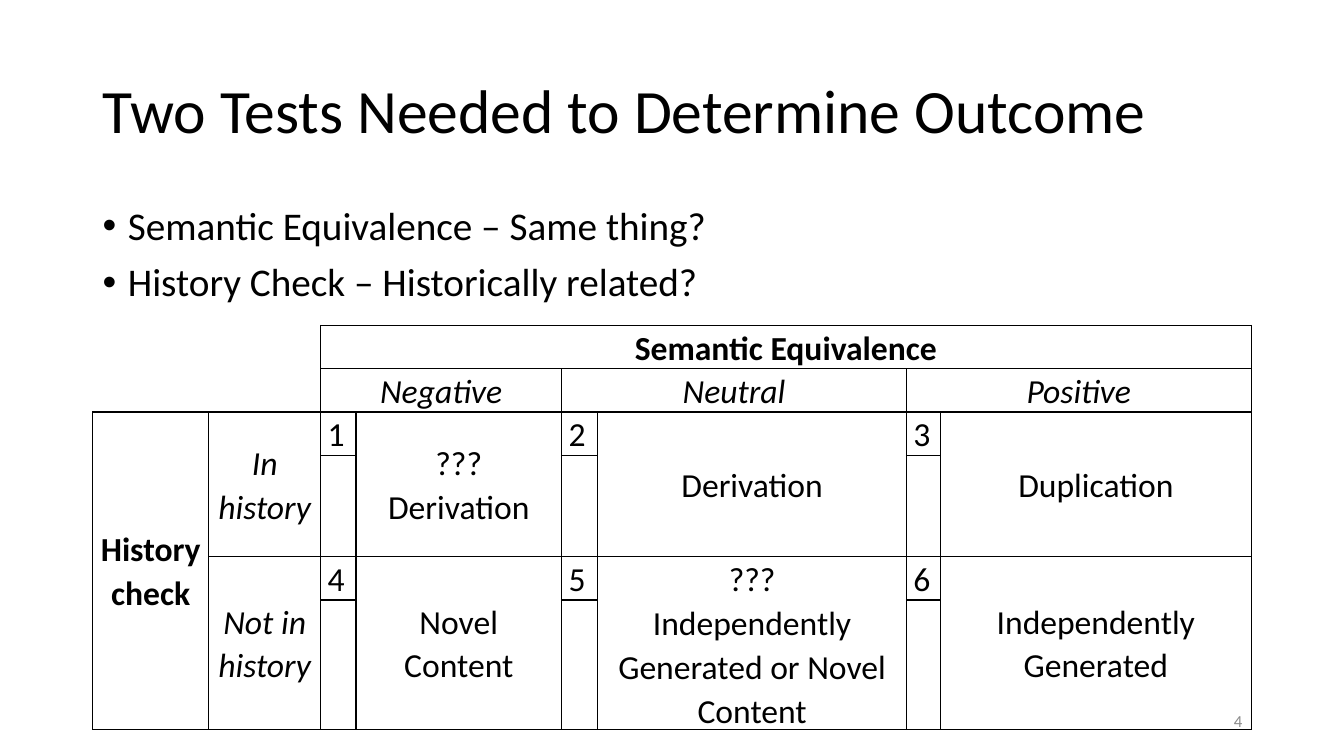
"""Build a slide that crosses semantic equivalence with a history check."""
from lxml.etree import SubElement
from pptx import Presentation
from pptx.dml.color import RGBColor
from pptx.enum.text import MSO_ANCHOR, PP_ALIGN
from pptx.oxml.ns import qn
from pptx.util import Inches, Pt

COLORS = {"ink": "000000", "page_number": "8C8C8C"}
LEFT, WIDTH = 0.92, 11.5
COLUMN_WIDTHS = [1.15, 1.11, 0.35, 2.04, 0.36, 3.06, 0.34, 3.08]
ROW_HEIGHTS = [0.4, 0.4, 0.4, 1.01, 0.4, 1.21]
EQUIVALENCES = ["Negative", "Neutral", "Positive"]
HISTORIES = ["In history", "Not in history"]
OUTCOMES = [
    ["???\nDerivation", "Derivation", "Duplication"],
    ["Novel Content", "???\vIndependently Generated or Novel Content",
     "Independently Generated"],
]


def style_text(frame, size, color="ink", align=PP_ALIGN.LEFT, spacing=None,
               bold=False, italic=False):
    for paragraph in frame.paragraphs:
        paragraph.alignment = align
        paragraph.line_spacing = spacing
        font = paragraph.font
        font.name, font.size = "Calibri", Pt(size)
        font.bold, font.italic = bold, italic
        font.color.rgb = RGBColor.from_string(COLORS[color])


def add_text(slide, text, left, top, width, height, anchor=MSO_ANCHOR.MIDDLE):
    box = slide.shapes.add_textbox(Inches(left), Inches(top), Inches(width), Inches(height))
    frame = box.text_frame
    frame.word_wrap = True
    frame.vertical_anchor = anchor
    frame.text = text
    return frame


presentation = Presentation()
presentation.slide_width, presentation.slide_height = Inches(13.33), Inches(7.5)
slide = presentation.slides.add_slide(presentation.slide_layouts[6])

title = add_text(slide, "Two Tests Needed to Determine Outcome", LEFT, 0.4, WIDTH, 1.45)
style_text(title, 44, spacing=0.9)

tests = add_text(
    slide, "Semantic Equivalence – Same thing?\nHistory Check – Historically related?",
    LEFT, 2, WIDTH, 1.09, MSO_ANCHOR.TOP)
style_text(tests, 28, spacing=0.9)
for paragraph in tests.paragraphs:
    paragraph.space_before = Pt(10)
    properties = paragraph._p.get_or_add_pPr()
    properties.set("marL", str(Inches(0.25)))
    properties.set("indent", str(Inches(-0.25)))
    bullet_font = properties.makeelement(qn("a:buFont"), {"typeface": "Arial"})
    bullet = properties.makeelement(qn("a:buChar"), {"char": "•"})
    properties.find(qn("a:defRPr")).addprevious(bullet_font)
    bullet_font.addnext(bullet)

table = slide.shapes.add_table(
    len(ROW_HEIGHTS), len(COLUMN_WIDTHS), Inches(LEFT), Inches(3.23),
    Inches(WIDTH), Inches(sum(ROW_HEIGHTS))).table
table.first_row = table.horz_banding = False
for column, width in zip(table.columns, COLUMN_WIDTHS):
    column.width = Inches(width)
for row, height in zip(table.rows, ROW_HEIGHTS):
    row.height = Inches(height)

for row in range(len(ROW_HEIGHTS)):
    for column in range(len(COLUMN_WIDTHS)):
        cell = table.cell(row, column)
        cell.margin_left = cell.margin_right = Inches(0.07)
        cell.margin_top = cell.margin_bottom = 0
        sides = "LRTB"
        if row < 2 and column < 2:
            sides = "R" * (column == 1) + "B" * (row == 1)
        for side in sides:
            border = SubElement(cell._tc.get_or_add_tcPr(), qn(f"a:ln{side}"), w=str(Pt(1)))
            fill = SubElement(border, qn("a:solidFill"))
            SubElement(fill, qn("a:srgbClr"), val=COLORS["ink"])
        cell.fill.background()

entries = [
    (0, 2, 1, 6, "Semantic Equivalence", "bold"),
    (2, 0, 4, 1, "History check", "bold"),
]
for index, equivalence in enumerate(EQUIVALENCES):
    entries.append((1, 2 + 2 * index, 1, 2, equivalence, "italic"))
for group, history in enumerate(HISTORIES):
    top = 2 + 2 * group
    entries.append((top, 1, 2, 1, history, "italic"))
    for index, outcome in enumerate(OUTCOMES[group]):
        column = 2 + 2 * index
        number = str(3 * group + index + 1)
        entries.append((top, column, 1, 1, number, "number"))
        entries.append((top, column + 1, 2, 1, outcome, "outcome"))

for row, column, height, width, text, kind in entries:
    cell = table.cell(row, column)
    if height * width > 1:
        cell.merge(table.cell(row + height - 1, column + width - 1))
    cell.text = text
    cell.vertical_anchor = MSO_ANCHOR.MIDDLE if height > 1 else MSO_ANCHOR.TOP
    align = PP_ALIGN.LEFT if kind == "number" else PP_ALIGN.CENTER
    style_text(cell.text_frame, 24, align=align, spacing=1.07,
               bold=kind == "bold", italic=kind == "italic")

page_number = add_text(slide, "4", 9.42, 6.95, 3, 0.4)
style_text(page_number, 12, "page_number", PP_ALIGN.RIGHT)

presentation.save("out.pptx")
